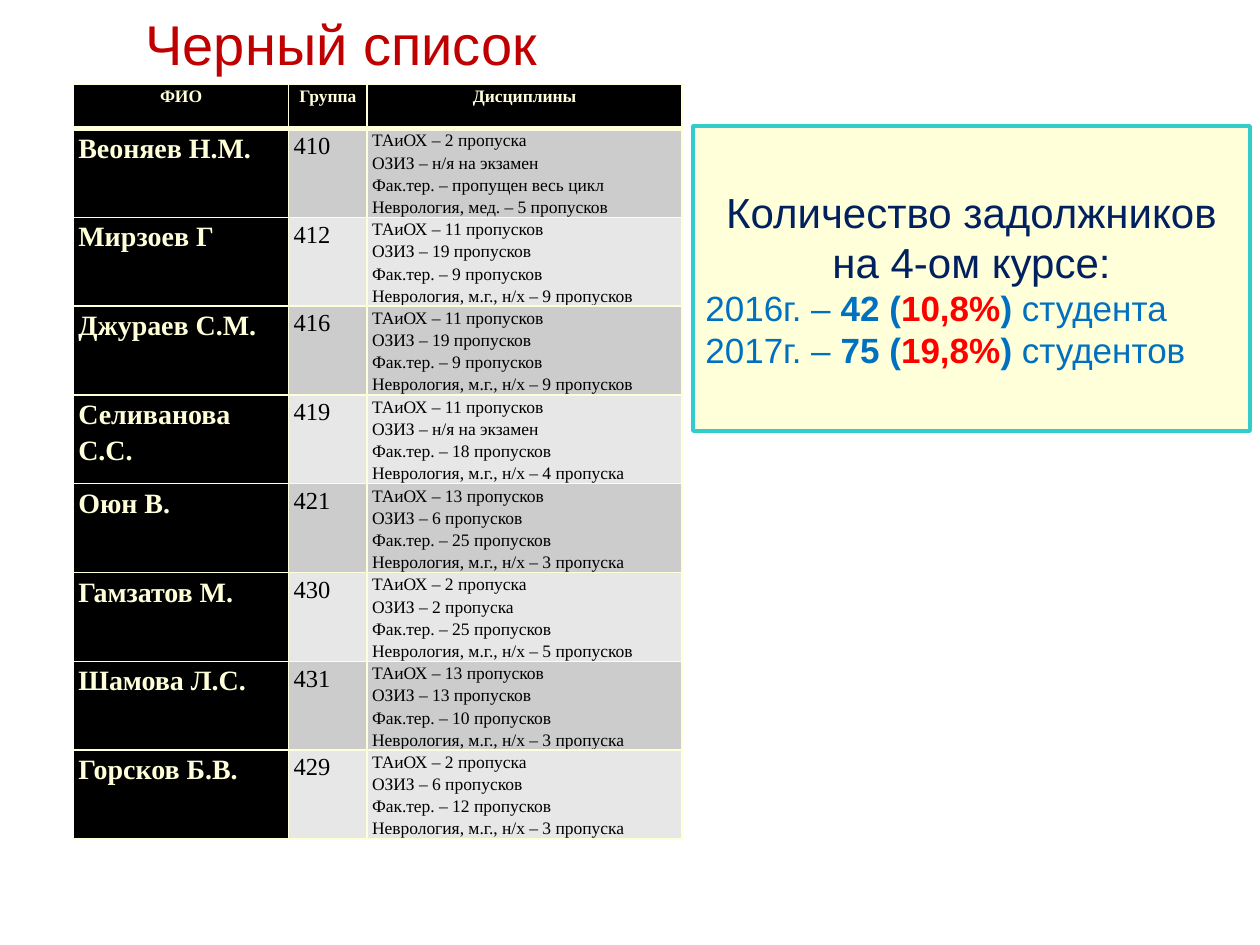
from dataclasses import dataclass

from lxml.etree import SubElement
from pptx import Presentation
from pptx.dml.color import RGBColor
from pptx.enum.shapes import MSO_SHAPE
from pptx.enum.text import MSO_ANCHOR, PP_ALIGN
from pptx.oxml.ns import qn
from pptx.util import Cm, Pt


@dataclass(frozen=True)
class Theme:
    """Colours, fonts and type sizes of the slide."""
    title: str = "C00000"
    cream: str = "FFFFD9"
    black: str = "000000"
    bands: tuple = ("CCCCCC", "E7E7E7")
    frame: str = "33CCCC"
    navy: str = "002060"
    blue: str = "0070C0"
    red: str = "FF0000"
    sans: str = "Arial"
    serif: str = "Times New Roman"
    title_size: int = 32
    heading_size: int = 24
    count_size: int = 20
    name_size: int = 16
    group_size: int = 14
    small_size: int = 10


THEME = Theme()
HEADERS = ("ФИО", "Группа", "Дисциплины")
COLUMN_WIDTHS = (4.34, 1.58, 6.35)
SUBJECTS = ("ТАиОХ", "ОЗИЗ", "Фак.тер.")
DEBTORS = (
    ("Веоняев Н.М.", "410", ("2 пропуска", "н/я на экзамен", "пропущен весь цикл"),
     "мед. – 5 пропусков"),
    ("Мирзоев Г", "412", ("11 пропусков", "19 пропусков", "9 пропусков"),
     "м.г., н/х – 9 пропусков"),
    ("Джураев С.М.", "416", ("11 пропусков", "19 пропусков", "9 пропусков"),
     "м.г., н/х – 9 пропусков"),
    ("Селиванова С.С.", "419", ("11 пропусков", "н/я на экзамен", "18 пропусков"),
     "м.г., н/х – 4 пропуска"),
    ("Оюн В.", "421", ("13 пропусков", "6 пропусков", "25 пропусков"),
     "м.г., н/х – 3 пропуска"),
    ("Гамзатов М.", "430", ("2 пропуска", "2 пропуска", "25 пропусков"),
     "м.г., н/х – 5 пропусков"),
    ("Шамова Л.С.", "431", ("13 пропусков", "13 пропусков", "10 пропусков"),
     "м.г., н/х – 3 пропуска"),
    ("Горсков Б.В.", "429", ("2 пропуска", "6 пропусков", "12 пропусков"),
     "м.г., н/х – 3 пропуска"),
)
COUNTS = (
    ("2016г. – ", "42 (", "10,8%", "студента"),
    ("2017г. – ", "75 (", "19,8%", "студентов"),
)


def style_runs(p, size, color, font, bold=False):
    """Format every run of a paragraph alike."""
    for r in p.runs:
        r.font.size, r.font.name, r.font.bold = Pt(size), font, bold
        r.font.color.rgb = RGBColor.from_string(color)


def add_title(s, text):
    """Fill and place the title placeholder."""
    sp = s.shapes.title
    sp.left, sp.top, sp.width, sp.height = Cm(0), Cm(0.03), Cm(13.77), Cm(1.68)
    tf = sp.text_frame
    tf.text, tf.vertical_anchor = text, MSO_ANCHOR.MIDDLE
    p = tf.paragraphs[0]
    p.alignment = PP_ALIGN.CENTER
    style_runs(p, THEME.title_size, THEME.title, THEME.sans)


def set_borders(cell, top, bottom):
    """Draw cream borders of the given top and bottom widths."""
    tc_pr = cell._tc.get_or_add_tcPr()
    for side, width in (("L", 1), ("R", 1), ("T", top), ("B", bottom)):
        ln = SubElement(tc_pr, qn(f"a:ln{side}"), w=str(Pt(width)))
        fill = SubElement(ln, qn("a:solidFill"))
        SubElement(fill, qn("a:srgbClr"), val=THEME.cream)


def fill_cell(cell, text, size, color, fill, bold=False, align=PP_ALIGN.LEFT, top=1, bottom=1):
    """Write and format one table cell."""
    set_borders(cell, top, bottom)
    cell.fill.solid()
    cell.fill.fore_color.rgb = RGBColor.from_string(fill)
    cell.margin_left = cell.margin_right = Cm(0.1)
    cell.margin_top = cell.margin_bottom = Cm(0)
    cell.text = text
    for p in cell.text_frame.paragraphs:
        p.alignment, p.line_spacing = align, 1.15
        style_runs(p, size, color, THEME.serif, bold)


def add_debtor_table(s):
    """Add the table of students and their missed classes."""
    frame = s.shapes.add_table(len(DEBTORS) + 1, len(HEADERS), Cm(1.48), Cm(1.7),
                               Cm(sum(COLUMN_WIDTHS)), Cm(15.21))
    table = frame.table
    table.first_row = table.horz_banding = False
    for column, width in zip(table.columns, COLUMN_WIDTHS):
        column.width = Cm(width)
    for i, row in enumerate(table.rows):
        row.height = Cm(1.79 if i else 0.89)
    for cell, text in zip(table.rows[0].cells, HEADERS):
        fill_cell(cell, text, THEME.small_size, THEME.cream, THEME.black,
                  bold=True, align=PP_ALIGN.CENTER, bottom=3)
    for i, (name, group, misses, neurology) in enumerate(DEBTORS):
        lines = [f"{subject} – {miss}" for subject, miss in zip(SUBJECTS, misses)]
        details = "\n".join(lines + [f"Неврология, {neurology}"])
        band, top = THEME.bands[i % 2], 1 if i else 3
        name_cell, group_cell, details_cell = table.rows[i + 1].cells
        fill_cell(name_cell, name, THEME.name_size, THEME.cream, THEME.black, bold=True, top=top)
        fill_cell(group_cell, group, THEME.group_size, THEME.black, band, top=top)
        fill_cell(details_cell, details, THEME.small_size, THEME.black, band, top=top)


def add_count_line(tf, year, count, share, noun):
    """Add one year's count with its share in red."""
    p = tf.add_paragraph()
    p.alignment = PP_ALIGN.LEFT
    for text in (year, count, share, ") ", noun):
        p.add_run().text = text
    style_runs(p, THEME.count_size, THEME.blue, THEME.sans)
    for r in p.runs[1:4]:
        r.font.bold = True
    p.runs[2].font.color.rgb = RGBColor.from_string(THEME.red)


def add_summary(s):
    """Add the framed box with the yearly totals."""
    sp = s.shapes.add_shape(MSO_SHAPE.RECTANGLE, Cm(13.97), Cm(2.54), Cm(11.23), Cm(6.15))
    sp.shadow.inherit = False
    sp.fill.solid()
    sp.fill.fore_color.rgb = RGBColor.from_string(THEME.cream)
    sp.line.color.rgb = RGBColor.from_string(THEME.frame)
    sp.line.width = Pt(2)
    tf = sp.text_frame
    tf.word_wrap, tf.vertical_anchor = True, MSO_ANCHOR.MIDDLE
    p = tf.paragraphs[0]
    p.text = "Количество задолжников\vна 4-ом курсе:"
    p.alignment = PP_ALIGN.CENTER
    style_runs(p, THEME.heading_size, THEME.navy, THEME.sans)
    for count in COUNTS:
        add_count_line(tf, *count)


def main():
    """Build and save the slide."""
    prs = Presentation()
    prs.slide_width, prs.slide_height = Cm(25.4), Cm(19.05)
    s = prs.slides.add_slide(prs.slide_layouts[5])
    add_title(s, "Черный список")
    add_debtor_table(s)
    add_summary(s)
    prs.save("out.pptx")


if __name__ == "__main__":
    main()
